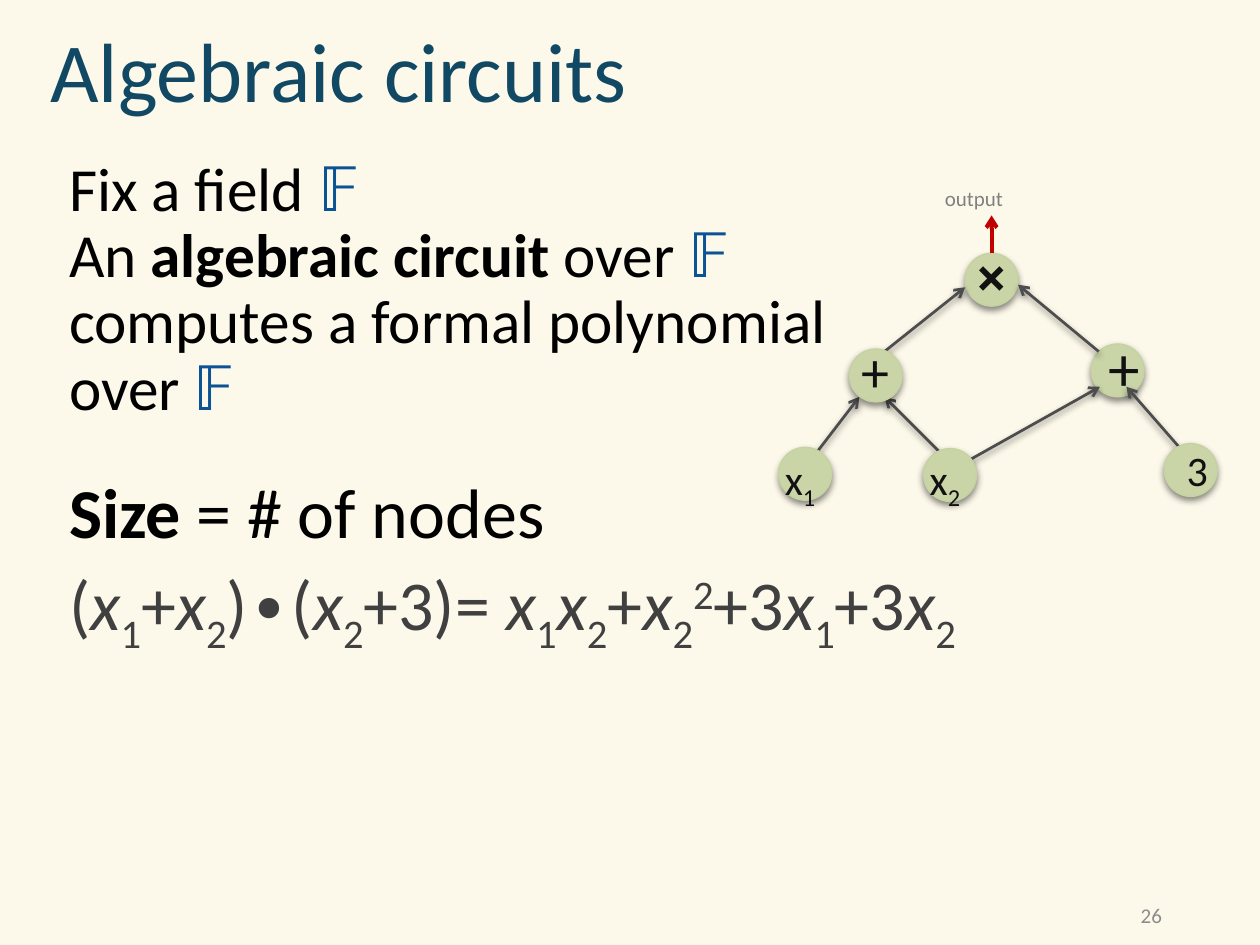
from lxml.etree import SubElement
from pptx import Presentation
from pptx.dml.color import RGBColor
from pptx.enum.shapes import MSO_CONNECTOR as Connector, MSO_SHAPE as Shape
from pptx.enum.text import MSO_ANCHOR as Anchor, PP_ALIGN as Align
from pptx.oxml.ns import qn
from pptx.util import Inches, Pt

COLORS = {
    "background": "FDF9EA", "title": "114864", "text": "000000", "field": "0B5394",
    "formula": "404040", "node": "C9D5A7", "node line": "C6D2A1", "edge": "4D4D4D",
    "label": "111111", "output": "C00000", "caption": "808080", "number": "8C8C8C",
}
BASELINES = {"sub": "-25000", "sup": "30000"}
FONT = "Calibri"
NODE_SIZE = 0.42

FIELD = ("𝔽", "field")
X1 = [("x", "italic"), ("1", "sub")]
X2 = [("x", "italic"), ("2", "sub")]
FORMULA = [("(", ""), *X1, ("+", ""), *X2, (")∙(", ""), *X2, ("+3)= ", ""), *X1, *X2,
           ("+", ""), *X2, ("2", "sup"), ("+3", ""), *X1, ("+3", ""), *X2]
BODY = [
    ([("Fix a field ", ""), FIELD], 35, "text", 0),
    ([("An ", ""), ("algebraic circuit ", "bold"), ("over ", ""), FIELD], 35, "text", 0),
    ([("computes a formal polynomial", "")], 35, "text", 0),
    ([("over ", ""), FIELD], 35, "text", 0),
    ([("Size", "bold"), (" = # of nodes", "")], 40, "text", 31),
    (FORMULA, 40, "formula", 5),
]

GATES = [
    ((7.66, 2.01), [("˟", "")], (7.62, 1.92, 0.33, 1.16), 66),
    ((8.66, 2.73), [("+", "")], (8.7, 2.6, 0.34, 0.68), 36),
]
FRONT_NODES = [
    ((9.24, 3.52), [("3", "")], (9.32, 3.51, 0.3, 0.48), 24),
    ((6.74, 2.77), [("+", "")], (6.74, 2.66, 0.3, 0.61), 32),
    ((7.33, 3.56), [("x", ""), ("2", "sub")], (7.28, 3.55, 0.51, 0.48), 24),
    ((6.18, 3.55), [("x", ""), ("1", "sub")], (6.13, 3.55, 0.51, 0.48), 24),
]
EDGES = [
    ((7.02, 2.79), (7.66, 2.28)),
    ((8.72, 2.79), (8.08, 2.26)),
    ((9.36, 3.55), (8.94, 3.07)),
    ((7.66, 3.67), (8.73, 3.07)),
    ((7.45, 3.58), (7.02, 3.15)),
    ((6.49, 3.58), (6.82, 3.15)),
]


def color(name):
    """Return the named colour."""
    return RGBColor.from_string(COLORS[name])


def add_runs(paragraph, runs, size, color_name):
    """Add styled runs to a paragraph."""
    for text, style in runs:
        run = paragraph.add_run()
        run.text = text
        font = run.font
        font.name, font.size = FONT, Pt(size)
        font.color.rgb = color(style if style in COLORS else color_name)
        if style == "bold":
            font.bold = True
        elif style == "italic":
            font.italic = True
        elif style in BASELINES:
            run.font._element.set("baseline", BASELINES[style])


def add_text(slide, box, paragraphs, spacing=1.0, align=Align.LEFT, anchor=Anchor.TOP):
    """Add a text box of (runs, size, colour, space before) paragraphs."""
    text_frame = slide.shapes.add_textbox(*map(Inches, box)).text_frame
    text_frame.word_wrap = True
    text_frame.vertical_anchor = anchor
    for index, (runs, size, color_name, before) in enumerate(paragraphs):
        paragraph = text_frame.add_paragraph() if index else text_frame.paragraphs[0]
        paragraph.alignment = align
        paragraph.line_spacing = spacing
        paragraph.space_before = Pt(before)
        add_runs(paragraph, runs, size, color_name)


def add_effects(shape, shadow):
    """Give a shape a soft shadow below it, or none."""
    properties = shape._element.spPr
    effects = SubElement(properties, qn("a:effectLst"))
    if shadow:
        outer = SubElement(effects, qn("a:outerShdw"), blurRad=str(Pt(4)),
                           dist=str(Pt(2)), dir="5400000", rotWithShape="0")
        black = SubElement(outer, qn("a:srgbClr"), val="000000")
        SubElement(black, qn("a:alpha"), val="45000")


def add_arrow(slide, start, end, color_name, width, shadow):
    """Add a straight arrow between two points."""
    arrow = slide.shapes.add_connector(Connector.STRAIGHT, *map(Inches, start + end))
    arrow.line.color.rgb = color(color_name)
    arrow.line.width = Pt(width)
    SubElement(arrow.line._get_or_add_ln(), qn("a:tailEnd"), type="arrow")
    add_effects(arrow, shadow)


def add_node(slide, position, label, label_box, size):
    """Add a circuit node with its label."""
    node = slide.shapes.add_shape(
        Shape.OVAL, *map(Inches, position + (NODE_SIZE, NODE_SIZE)))
    node.fill.solid()
    node.fill.fore_color.rgb = color("node")
    node.line.color.rgb = color("node line")
    node.line.width = Pt(0.75)
    add_effects(node, True)
    add_text(slide, label_box, [(label, size, "label", 0)], spacing=0.95)


def add_title(slide, text):
    """Place and format the title."""
    title = slide.shapes.title
    title.left, title.top, title.width, title.height = map(Inches, (0.3, 0.26, 9.48, 0.67))
    title.text_frame.vertical_anchor = Anchor.MIDDLE
    paragraph = title.text_frame.paragraphs[0]
    paragraph.alignment = Align.LEFT
    paragraph.line_spacing = 0.9
    add_runs(paragraph, [(text, "")], 48, "title")


def main():
    """Build the slide on algebraic circuits."""
    presentation = Presentation()
    presentation.slide_width, presentation.slide_height = Inches(10), Inches(7.5)
    slide = presentation.slides.add_slide(presentation.slide_layouts[5])
    slide.background.fill.solid()
    slide.background.fill.fore_color.rgb = color("background")
    add_title(slide, "Algebraic circuits")
    add_text(slide, (0.45, 1.21, 8.84, 5.14), BODY, spacing=0.9)
    for gate in GATES:
        add_node(slide, *gate)
    for start, end in EDGES:
        add_arrow(slide, start, end, "edge", 1.57, True)
    for node in FRONT_NODES:
        add_node(slide, *node)
    add_arrow(slide, (7.87, 2.01), (7.87, 1.71), "output", 2.25, False)
    add_text(slide, (7.4, 1.42, 0.94, 0.3), [([("output", "")], 12, "caption", 0)])
    add_text(slide, (8.65, 7.18, 0.67, 0.17), [([("26", "")], 12, "number", 0)],
             align=Align.RIGHT, anchor=Anchor.MIDDLE)
    presentation.save("out.pptx")


if __name__ == "__main__":
    main()
